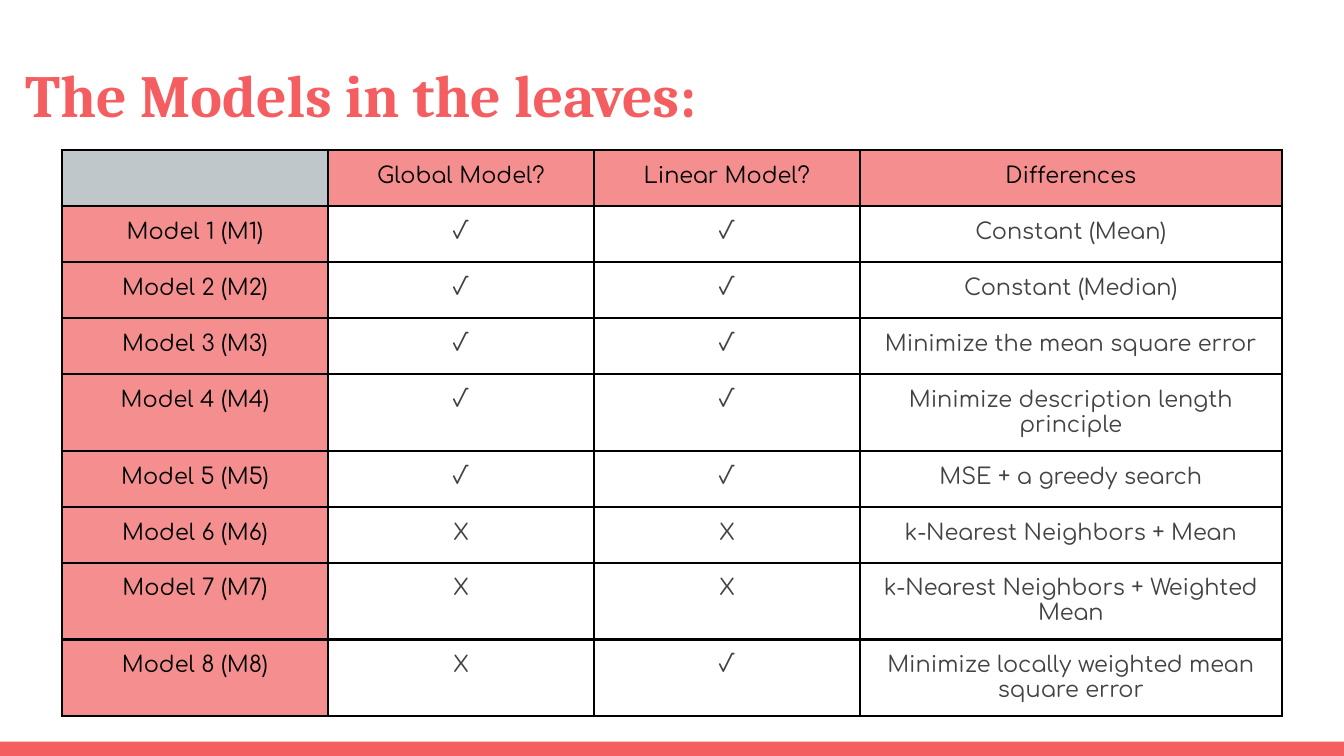
from lxml.etree import SubElement
from pptx import Presentation
from pptx.dml.color import RGBColor
from pptx.enum.shapes import MSO_SHAPE
from pptx.enum.text import MSO_ANCHOR, MSO_AUTO_SIZE, PP_ALIGN
from pptx.oxml.ns import qn
from pptx.util import Pt

COLORS = {
    "accent": "F55E61",
    "header": "F58F8F",
    "corner": "BFC7CA",
    "black": "000000",
    "body": "434343",
}
HEADERS = ["", "Global Model?", "Linear Model?", "Differences"]
MODELS = [
    ("√", "√", "Constant (Mean)"),
    ("√", "√", "Constant (Median)"),
    ("√", "√", "Minimize the mean square error"),
    ("√", "√", "Minimize description length principle"),
    ("√", "√", "MSE + a greedy search"),
    ("X", "X", "k-Nearest Neighbors + Mean"),
    ("X", "X", "k-Nearest Neighbors + Weighted Mean"),
    ("X", "√", "Minimize locally weighted mean\nsquare error"),
]
COL_WIDTHS = [142.5, 142.5, 142.5, 226]
ROW_HEIGHT = 30
INSET = 7.2


def rgb(name):
    """Return the named palette colour."""
    return RGBColor.from_string(COLORS[name])


def write_text(tf, text, font="Comfortaa", size=12, color="body", bold=False,
               align=PP_ALIGN.CENTER):
    """Write text into the first paragraph, with line breaks at newlines."""
    p = tf.paragraphs[0]
    p.alignment = align
    for i, line in enumerate(text.split("\n")):
        if i:
            p.add_line_break()
        r = p.add_run()
        r.text = line
        r.font.name = font
        r.font.size = Pt(size)
        r.font.bold = bold
        r.font.color.rgb = rgb(color)


def set_insets(box):
    """Give a cell or text frame equal margins on all sides."""
    box.margin_left = box.margin_right = Pt(INSET)
    box.margin_top = box.margin_bottom = Pt(INSET)


def set_borders(cell, color="black", width=1.5):
    """Draw a solid line on the four sides of a cell."""
    tc_pr = cell._tc.get_or_add_tcPr()
    for i, side in enumerate(("a:lnL", "a:lnR", "a:lnT", "a:lnB")):
        ln = SubElement(tc_pr, qn(side), w=str(Pt(width)))
        fill = SubElement(ln, qn("a:solidFill"))
        SubElement(fill, qn("a:srgbClr"), val=COLORS[color])
        tc_pr.insert(i, ln)


def add_title(s, left, top, width, height):
    """Place and format the slide title."""
    sp = s.shapes.title
    sp.left, sp.top, sp.width, sp.height = map(Pt, (left, top, width, height))
    tf = sp.text_frame
    tf.word_wrap = True
    tf.auto_size = MSO_AUTO_SIZE.NONE
    tf.vertical_anchor = MSO_ANCHOR.TOP
    set_insets(tf)
    write_text(tf, "The Models in the leaves:", font="Cambria", size=32,
               color="accent", bold=True, align=PP_ALIGN.LEFT)


def add_footer_bar(s, left, top, width, height):
    """Add the coloured bar along the foot of the slide."""
    sp = s.shapes.add_shape(MSO_SHAPE.RECTANGLE,
                            *map(Pt, (left, top, width, height)))
    sp.shadow.inherit = False
    sp.fill.solid()
    sp.fill.fore_color.rgb = rgb("accent")
    sp.line.fill.background()


def add_model_table(s, left, top):
    """Add the comparison of the eight models."""
    rows = [HEADERS] + [(f"Model {n} (M{n})", *values)
                        for n, values in enumerate(MODELS, 1)]
    table = s.shapes.add_table(
        len(rows), len(COL_WIDTHS), Pt(left), Pt(top),
        Pt(sum(COL_WIDTHS)), Pt(ROW_HEIGHT * len(rows))).table
    table.first_row = table.horz_banding = False
    for column, width in zip(table.columns, COL_WIDTHS):
        column.width = Pt(width)
    for i, row in enumerate(rows):
        table.rows[i].height = Pt(ROW_HEIGHT)
        for j, text in enumerate(row):
            cell = table.cell(i, j)
            is_header = i == 0 or j == 0
            if is_header:
                cell.fill.solid()
                cell.fill.fore_color.rgb = rgb("header" if text else "corner")
            else:
                cell.fill.background()
            set_borders(cell)
            if text:
                set_insets(cell)
                write_text(cell.text_frame, text,
                           color="black" if is_header else "body")


def main():
    """Build and save the slide."""
    prs = Presentation()
    prs.slide_width, prs.slide_height = Pt(720), Pt(405)
    s = prs.slides.add_slide(prs.slide_layouts[5])
    add_footer_bar(s, 0, 397.3, 720, 7.7)
    add_title(s, 6.3, 23.6, 671, 49)
    add_model_table(s, 33.2, 80.5)
    prs.save("out.pptx")


if __name__ == "__main__":
    main()
